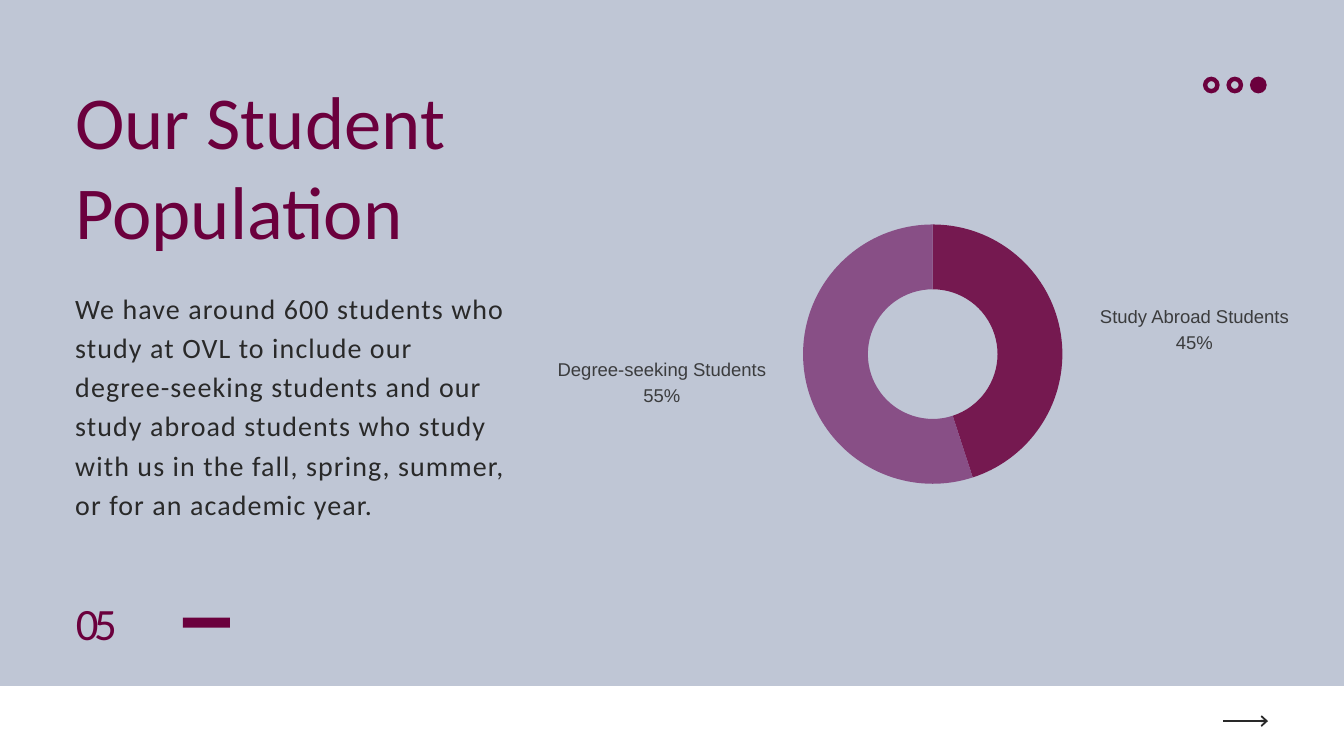
from lxml import etree
from pptx import Presentation, util as u
from pptx.chart.data import CategoryChartData
from pptx.dml.color import RGBColor
from pptx.enum import chart as ch, shapes, text
from pptx.oxml import parse_xml
from pptx.oxml.ns import nsdecls, qn

WINE = RGBColor(0x6B, 0x00, 0x3D)
PLUM = RGBColor(0x80, 0x3E, 0x7B)
INK = RGBColor(0x29, 0x29, 0x29)
MIST = RGBColor(0xBF, 0xC6, 0xD5)
WHITE = RGBColor(0xFF, 0xFF, 0xFF)

COLS, ROWS = 20, 11.25


def fade(element, percent=87):
    """Make every colour in the element slightly transparent."""
    for clr in element.iter(qn("a:srgbClr")):
        etree.SubElement(clr, qn("a:alpha")).set("val", str(percent * 1000))


class Deck:
    """Slide style and the current slide; lengths are grid columns and rows."""
    body_font, label_font = "Calibri", "Arial"

    def __init__(self):
        self.prs = Presentation()
        self.prs.slide_width, self.prs.slide_height = u.Inches(20), u.Inches(11.25)
        self.s = self.prs.slides.add_slide(self.prs.slide_layouts[6])
        fill = self.s.background.fill
        fill.solid()
        fill.fore_color.rgb = MIST

    def grid(self, x, y, w, h):
        cw, rh = self.prs.slide_width / COLS, self.prs.slide_height / ROWS
        return [round(v) for v in (x * cw, y * rh, w * cw, h * rh)]

    def shape(self, kind, x, y, w, h, color):
        sp = self.s.shapes.add_shape(kind, *self.grid(x, y, w, h))
        sp.shadow.inherit = False
        sp.fill.solid()
        sp.fill.fore_color.rgb = color
        sp.line.fill.background()
        return sp

    def text(self, x, y, w, h, lines, size, leading, color=INK, spacing=0,
             font=body_font, align=text.PP_ALIGN.LEFT, faded=False):
        tf = self.s.shapes.add_textbox(*self.grid(x, y, w, h)).text_frame
        tf.word_wrap = True
        tf.margin_left = tf.margin_right = tf.margin_top = tf.margin_bottom = 0
        for i, line in enumerate(lines):
            p = tf.add_paragraph() if i else tf.paragraphs[0]
            p.alignment, p.line_spacing = align, u.Pt(leading)
            r = p.add_run()
            r.text = line
            r.font.name, r.font.size = font, u.Pt(size)
            r.font.color.rgb = color
            if spacing:
                r.font._element.set("spc", str(round(spacing * 100)))
            if faded:
                fade(r.font._element)

    def label(self, x, y, w, name, share):
        self.text(x, y, w, 0.75, [name, share], 19.8, 27.7, font=self.label_font,
                  align=text.PP_ALIGN.CENTER, faded=True)

    def arrow(self, x, y, length, color):
        left, top, w, _ = self.grid(x, y, length, 0)
        c = self.s.shapes.add_connector(shapes.MSO_CONNECTOR.STRAIGHT,
                                        left, top, left + w, top)
        c.line.color.rgb, c.line.width = color, u.Pt(2.25)
        etree.SubElement(c.line._get_or_add_ln(), qn("a:tailEnd"),
                         type="arrow", w="lg", len="med")
        etree.SubElement(c._element.spPr, qn("a:effectLst"))

    def doughnut(self, x, y, size, shares, colors):
        data = CategoryChartData(number_format="0%")
        data.categories = list(shares)
        data.add_series("Students", list(shares.values()))
        chart = self.s.shapes.add_chart(ch.XL_CHART_TYPE.DOUGHNUT,
                                        *self.grid(x, y, size, size), data).chart
        chart.has_legend = chart.has_title = False
        chart.font.name, chart.font.size = self.label_font, u.Pt(19.8)
        chart.font.color.rgb = INK
        plot = chart.plots[0]
        plot.vary_by_categories = True
        for i, color in enumerate(colors):
            fmt = plot.series[0].points[i].format
            fmt.fill.solid()
            fmt.fill.fore_color.rgb = color
            fmt.line.fill.background()
        fade(plot._element)

        # The ring fills the whole frame, on a clear background
        root = chart._chartSpace
        area = root.find(".//" + qn("c:plotArea"))
        for old in area.findall(qn("c:layout")):
            area.remove(old)
        area.insert(0, parse_xml(
            f'<c:layout {nsdecls("c")}><c:manualLayout><c:layoutTarget val="inner"/>'
            '<c:xMode val="edge"/><c:yMode val="edge"/><c:x val="0"/><c:y val="0"/>'
            '<c:w val="1"/><c:h val="1"/></c:manualLayout></c:layout>'))
        area.find(".//" + qn("c:holeSize")).set("val", "50")
        root.find(qn("c:chart")).addnext(parse_xml(
            f'<c:spPr {nsdecls("c", "a")}><a:noFill/><a:ln><a:noFill/></a:ln></c:spPr>'))


def main():
    d = Deck()
    kinds = shapes.MSO_SHAPE

    # Footer band with arrow
    d.shape(kinds.RECTANGLE, 0, 10.21, COLS, ROWS - 10.21, WHITE)
    d.arrow(18.2, 10.73, 0.67, INK)

    # Three dots, the last one full
    for i, kind in enumerate((kinds.DONUT, kinds.DONUT, kinds.OVAL)):
        dot = d.shape(kind, 17.9 + 0.35 * i, 1.14, 0.25, 0.25, WINE)
        if kind == kinds.DONUT:
            dot.adjustments[0] = 0.27

    # Title, body and page number
    d.text(1.12, 1.12, 7.43, 2.66, ["Our Student Population"], 80, 96, WINE)
    d.shape(kinds.RECTANGLE, 2.72, 9.19, 0.7, 0.15, WINE)
    d.text(1.13, 8.87, 1.22, 0.79, ["05"], 48, 57.6, WINE, spacing=-4.8)
    d.text(1.12, 4.25, 6.5, 4.03, [
        "We have around 600 students who study at OVL to include our "
        "degree-seeking students and our study abroad students who study "
        "with us in the fall, spring, summer, or for an academic year."],
        30, 42, spacing=1.2)

    # Student shares
    abroad, degree = "Study Abroad Students", "Degree-seeking Students"
    d.doughnut(11.95, 3.34, 3.86, {abroad: 0.45, degree: 0.55}, (WINE, PLUM))
    d.label(8.25, 5.27, 3.2, degree, "55%")
    d.label(16.36, 4.49, 2.83, abroad, "45%")

    d.prs.save("out.pptx")


if __name__ == "__main__":
    main()
